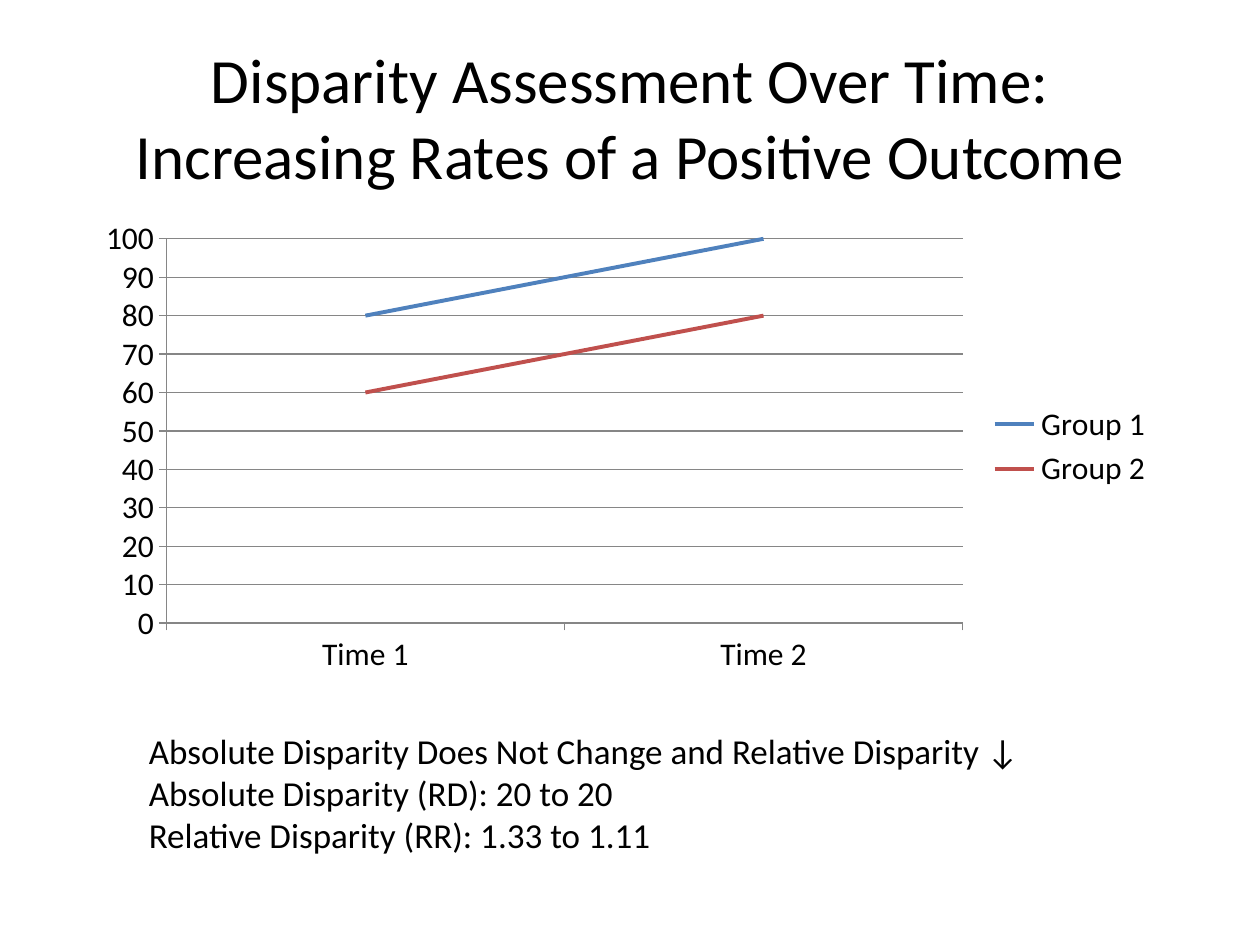
from pptx import Presentation
from pptx import util as u
from pptx.chart.data import CategoryChartData
from pptx.dml.color import RGBColor
from pptx.enum import chart as ch, text

FONT = "Calibri"
BLACK = "000000"
GREY = "868686"
TIMES = ["Time 1", "Time 2"]
GROUPS = [("Group 1", (80, 100), "4F81BD"), ("Group 2", (60, 80), "C0504D")]
TITLE = "Disparity Assessment Over Time:\vIncreasing Rates of a Positive Outcome"
FINDINGS = [
    "Absolute Disparity Does Not Change and Relative Disparity ↓",
    "Absolute Disparity (RD): 20 to 20",
    "Relative Disparity (RR): 1.33 to 1.11",
]


def rgb(value):
    return RGBColor.from_string(value)


def box(*lengths):
    """Left, top, width and height from centimetres."""
    return [u.Cm(n) for n in lengths]


def style_font(font, size):
    font.name = FONT
    font.size = u.Pt(size)
    font.color.rgb = rgb(BLACK)


def style_line(line, color, width):
    line.color.rgb = rgb(color)
    line.width = u.Pt(width)


def add_text(slide, position, content, size, align=text.PP_ALIGN.LEFT,
             anchor=text.MSO_ANCHOR.TOP):
    tf = slide.shapes.add_textbox(*position).text_frame
    tf.word_wrap = True
    tf.vertical_anchor = anchor
    tf.text = content
    for p in tf.paragraphs:
        p.alignment = align
        for r in p.runs:
            style_font(r.font, size)


def add_line_chart(slide, position):
    data = CategoryChartData()
    data.categories = TIMES
    for name, values, _ in GROUPS:
        data.add_series(name, values)
    chart = slide.shapes.add_chart(ch.XL_CHART_TYPE.LINE, *position, data).chart
    style_font(chart.font, 18)
    chart.has_title = False
    chart.has_legend = True
    chart.legend.position = ch.XL_LEGEND_POSITION.RIGHT
    chart.legend.include_in_layout = False

    for axis in (chart.category_axis, chart.value_axis):
        axis.major_tick_mark = ch.XL_TICK_MARK.OUTSIDE
        style_line(axis.format.line, GREY, 0.75)
    values = chart.value_axis
    values.minimum_scale, values.maximum_scale, values.major_unit = 0, 100, 10
    values.has_major_gridlines = True
    style_line(values.major_gridlines.format.line, GREY, 0.75)

    for series, (_, _, color) in zip(chart.plots[0].series, GROUPS):
        series.smooth = False
        series.marker.style = ch.XL_MARKER_STYLE.NONE
        style_line(series.format.line, color, 2.25)


def main():
    prs = Presentation()
    prs.slide_width, prs.slide_height = u.Cm(25.4), u.Cm(19.05)
    slide = prs.slides.add_slide(prs.slide_layouts[6])
    add_text(slide, box(1.27, 0.76, 22.86, 3.18), TITLE, 36,
             text.PP_ALIGN.CENTER, text.MSO_ANCHOR.MIDDLE)
    add_line_chart(slide, box(1.7, 4.24, 21.8, 9.53))
    add_text(slide, box(2.75, 14.58, 21.59, 2.82), "\n".join(FINDINGS), 20)
    prs.save("out.pptx")


if __name__ == "__main__":
    main()
